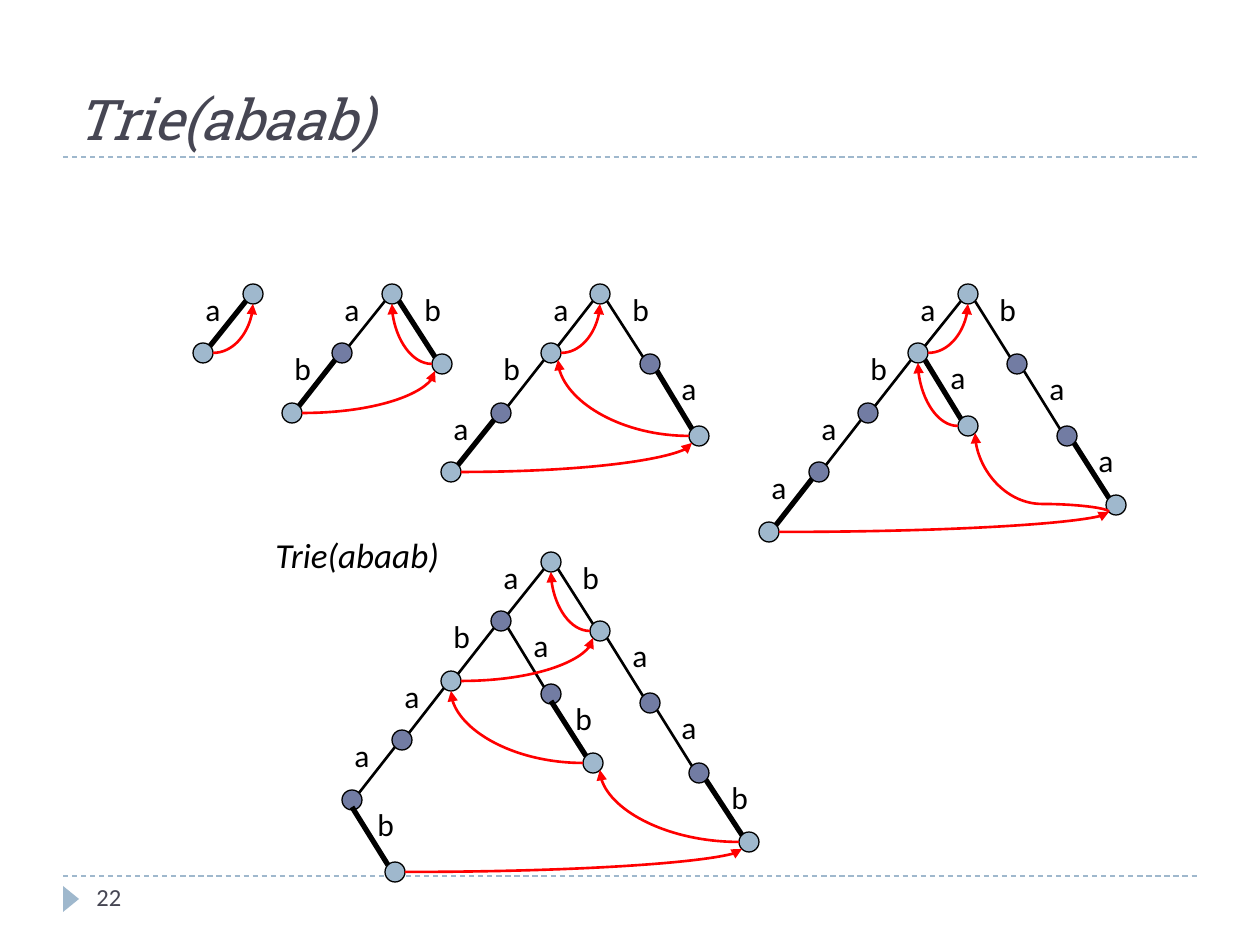
from dataclasses import dataclass
from lxml.etree import SubElement
from pptx import Presentation
from pptx.dml.color import RGBColor
from pptx.enum.dml import MSO_LINE
from pptx.enum.shapes import MSO_CONNECTOR, MSO_SHAPE
from pptx.enum.text import MSO_ANCHOR, MSO_AUTO_SIZE, PP_ALIGN
from pptx.oxml.ns import qn
from pptx.util import Emu, Pt

# Content: node centres in px, each node named by the word it spells
TITLE = "Trie(abaab)"
PAGE = "22"
TRIES = [
    ("a", {"": (253, 294), "a": (203, 353)}),
    ("ab", {"": (392, 294), "a": (342, 353), "ab": (292, 413),
            "b": (442, 364)}),
    ("aba", {"": (600, 294), "a": (551, 353), "ab": (501, 413),
             "aba": (451, 472), "b": (650, 364), "ba": (699, 436)}),
    ("abaa", {"": (968, 294), "a": (918, 353), "ab": (868, 413),
              "aba": (819, 472), "abaa": (769, 532), "aa": (968, 426),
              "b": (1017, 364), "ba": (1067, 436), "baa": (1116, 505)}),
    ("abaab", {"": (551, 562), "a": (501, 621), "ab": (451, 681),
               "aba": (402, 740), "abaa": (352, 800), "abaab": (395, 872),
               "aa": (551, 694), "aab": (593, 763), "b": (600, 631),
               "ba": (650, 703), "baa": (699, 773), "baab": (749, 842)}),
]
KINKS = ("aab", "abaab")     # edges that leave from the node's bottom
WAVES = ("baa",)             # suffix links drawn as an S


@dataclass
class Theme:
    head: str = "Roboto Slab"
    body: str = "Calibri"
    ink: str = "000000"
    gray: str = "464653"
    pale: str = "9FB8CD"
    dark: str = "727CA3"
    link: str = "FF0000"
    big: int = 32
    mid: int = 20
    small: int = 18
    tiny: int = 14
    thin: float = 1.5
    bold: float = 3
    hair: float = 0.75


T = Theme()
RAD, DIAG = 10, 7            # node radius and its diagonal offset


def px(n):
    return Emu(round(n * 914400 / 126))


def rgb(code):
    return RGBColor.from_string(code)


def write(shape, text, size=T.small, font=T.body, color=T.ink, slant=False,
          anchor=MSO_ANCHOR.TOP):
    frame = shape.text_frame
    frame.word_wrap = True
    frame.auto_size = MSO_AUTO_SIZE.NONE
    frame.vertical_anchor = anchor
    para = frame.paragraphs[0]
    para.alignment = PP_ALIGN.LEFT
    run = para.add_run()
    run.text = text
    run.font.size, run.font.name = Pt(size), font
    run.font.italic = slant
    run.font.color.rgb = rgb(color)


def label(text, x, y, w, h, **style):
    write(slide.shapes.add_textbox(px(x), px(y), px(w), px(h)), text, **style)


def solid(kind, x, y, w, h, fill, edge=None):
    shape = slide.shapes.add_shape(kind, px(x), px(y), px(w), px(h))
    shape.shadow.inherit = False
    shape.fill.solid()
    shape.fill.fore_color.rgb = rgb(fill)
    if edge:
        shape.line.color.rgb = rgb(edge)
        shape.line.width = Pt(T.hair)
    else:
        shape.line.fill.background()
    return shape


def stroke(start, end, color, width, kind=MSO_CONNECTOR.STRAIGHT):
    line = slide.shapes.add_connector(kind, *map(px, (*start, *end)))
    line.line.color.rgb = rgb(color)
    line.line.width = Pt(width)
    SubElement(line.element.spPr, qn("a:effectLst"))
    return line


def curve(start, end, wave):
    if wave:
        # a quarter turn swaps the box's width and height
        (x1, y1), (x2, y2) = start, end
        mx, my = (x1 + x2) / 2, (y1 + y2) / 2
        hw, hh = abs(y1 - y2) / 2, abs(x1 - x2) / 2
        start, end = (mx - hw, my + hh), (mx + hw, my - hh)
    line = stroke(start, end, T.link, T.thin, MSO_CONNECTOR.CURVE)
    props = line.element.spPr
    geom = props.find(qn("a:prstGeom"))
    if wave:
        props.find(qn("a:xfrm")).set("rot", str(270 * 60000))
        SubElement(geom.find(qn("a:avLst")), qn("a:gd"),
                   name="adj1", fmla="val 10200")
    else:
        geom.set("prst", "curvedConnector2")
    SubElement(props.find(qn("a:ln")), qn("a:tailEnd"), type="triangle")


def branch(nodes, word, fresh):
    (x1, y1), (x2, y2) = nodes[word[:-1]], nodes[word]
    side = 1 if x2 > x1 else -1
    out = 0 if word in KINKS else side * DIAG
    stroke((x1 + out, y1 + DIAG), (x2 - side * DIAG, y2 - DIAG),
           T.ink, T.bold if fresh else T.thin)
    if side < 0:
        spot = x2 - RAD, y1 - RAD
    else:
        spot = x2 - 30, y1 - (RAD if word == "b" else 1)
    label(word[-1], *spot, 50, 50)


def suffix(nodes, word):
    goal = word[1:]
    (x1, y1), (x2, y2) = nodes[word], nodes[goal]
    side = 1 if x2 > x1 else -1
    wave = word in WAVES
    start = (x1 - DIAG, y1 + DIAG) if wave else (x1 + side * RAD, y1)
    if goal and goal[0] != word[0]:
        end = x2 - side * DIAG, y2 + DIAG
    else:
        end = x2, y2 + RAD
    curve(start, end, wave)


def trie(text, nodes):
    chain = [text[i:] for i in range(len(text) + 1)]
    stems = {word[:-1] for word in nodes if word}
    for word, (x, y) in nodes.items():
        solid(MSO_SHAPE.OVAL, x - RAD, y - RAD, 2 * RAD, 2 * RAD,
              T.pale if word in chain else T.dark, T.ink)
    for word in nodes:
        if word:
            branch(nodes, word, word in chain and word not in stems)
    for word in chain[:-1]:
        suffix(nodes, word)


deck = Presentation()
deck.slide_width, deck.slide_height = px(1260), px(945)
slide = deck.slides.add_slide(deck.slide_layouts[5])

# Title, rules and page number
head = slide.shapes.title
head.left, head.top, head.width, head.height = map(px, (63, 32, 1134, 126))
write(head, TITLE, size=T.big, font=T.head, color=T.gray, slant=True,
      anchor=MSO_ANCHOR.BOTTOM)
for y in (876, 157):
    rule = stroke((63, y), (1197, y), T.pale, T.hair)
    rule.line.dash_style = MSO_LINE.DASH
mark = solid(MSO_SHAPE.ISOSCELES_TRIANGLE, 58, 891, 26, 16, T.pale)
mark.rotation = 90
label(PAGE, 84, 876, 273, 50, size=T.tiny, color=T.gray)

# Tries, one per prefix
for text, nodes in TRIES:
    trie(text, nodes)
label(TITLE, 263, 527, 218, 54, size=T.mid, slant=True)

deck.save("out.pptx")
